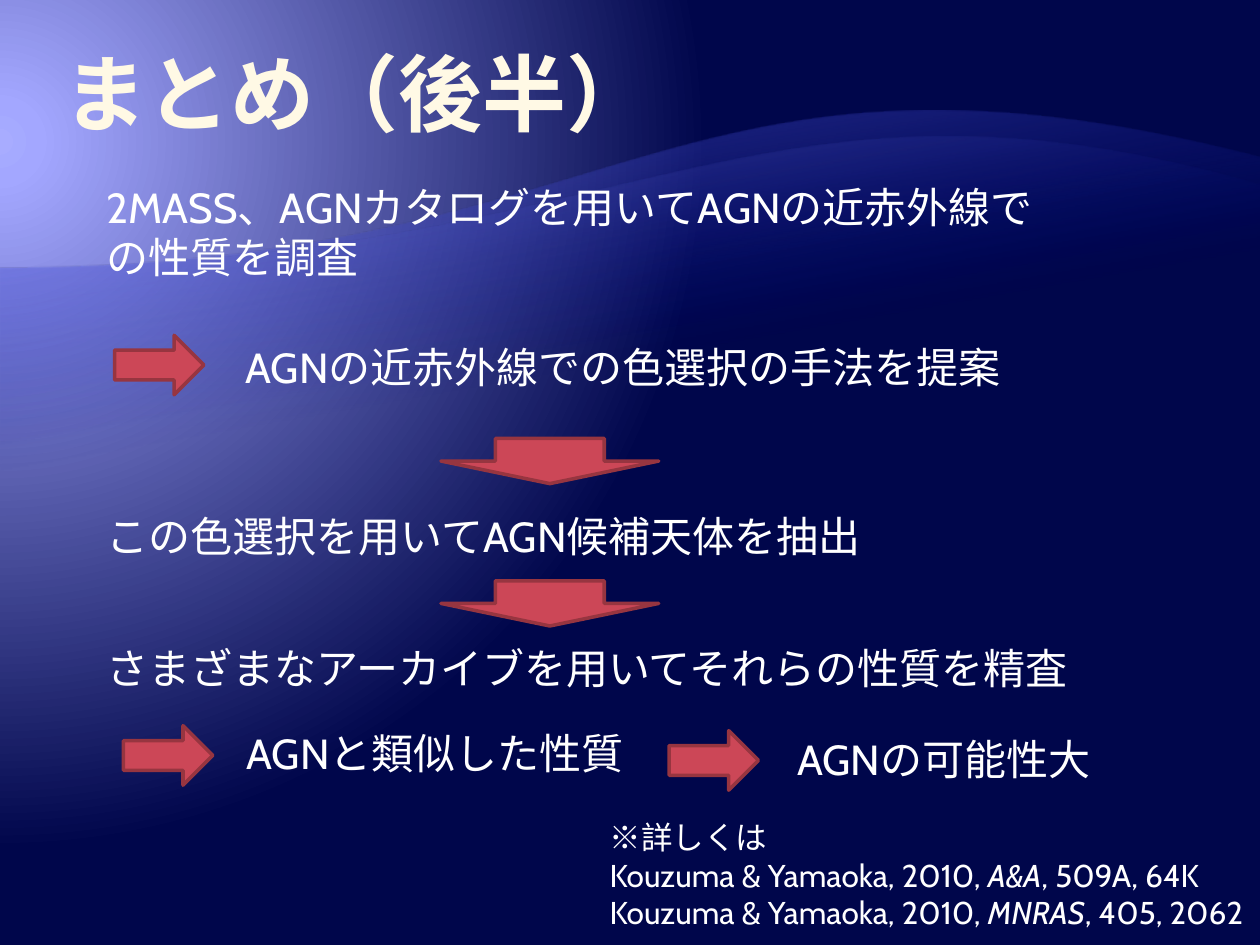
"""Build the summary slide on near-infrared AGN selection."""
import pptx
import pptx.dml.color
import pptx.enum.shapes
import pptx.enum.text
import pptx.oxml
import pptx.oxml.ns
import pptx.util

Cm = pptx.util.Cm
Pt = pptx.util.Pt
RGB = pptx.dml.color.RGBColor.from_string
MSO_SHAPE = pptx.enum.shapes.MSO_SHAPE

COLORS = {
    "title": "FFF9E5", "text": "FFFFFF", "arrow": "CC4757", "arrow_line": "973540",
    "glow": "A8ACFF", "light": "A3A7FF", "navy": "00064B",
    "wave": "797FFF", "deep": "000D9E",
}


def set_gradient(element, stops, direction):
    """Replace the gradient in element; stops are position, colour, alpha in percent."""
    stop_xml = "".join(
        f'<a:gs pos="{position * 1000}"><a:srgbClr val="{COLORS[color]}">'
        f'<a:alpha val="{alpha * 1000}"/></a:srgbClr></a:gs>'
        for position, color, alpha in stops)
    namespace = pptx.oxml.ns.nsdecls("a")
    gradient = pptx.oxml.parse_xml(
        f'<a:gradFill {namespace} rotWithShape="1"><a:gsLst>{stop_xml}</a:gsLst>{direction}</a:gradFill>')
    previous = next(element.iter(pptx.oxml.ns.qn("a:gradFill")))
    previous.getparent().replace(previous, gradient)


def format_run(run, size, color):
    """Set the font, size and colour of a run."""
    run.font.name = "Cabin"
    run.font.size = Pt(size)
    run.font.color.rgb = RGB(COLORS[color])


presentation = pptx.Presentation()
presentation.slide_width = Cm(25.4)
presentation.slide_height = Cm(19.05)
slide = presentation.slides.add_slide(presentation.slide_layouts[5])

slide.background.fill.gradient()
set_gradient(
    slide.element, [(0, "glow", 100), (5, "light", 100), (90, "navy", 100)],
    '<a:path path="circle"><a:fillToRect l="20000" t="30000" r="135000" b="100000"/></a:path>')

waves = [
    (18.62, [(0, 5.41), (12.7, 5.41), (13.56, 0.13), (25.4, 3.18)], "wave", 55),
    (16.18, [(0, 5.41), (12.7, 5.41), (15.19, 0.79), (25.4, 3.73)], "light", 30),
]
STEPS = 60
for bottom, controls, color, alpha in waves:
    crest = []
    for step in range(STEPS + 1):
        t = step / STEPS
        weights = ((1 - t) ** 3, 3 * t * (1 - t) ** 2, 3 * t ** 2 * (1 - t), t ** 3)
        crest.append(tuple(
            Cm(sum(weight * point[axis] for weight, point in zip(weights, controls)))
            for axis in (0, 1)))
    builder = slide.shapes.build_freeform(Cm(0), Cm(bottom))
    builder.add_line_segments(crest + [(Cm(25.4), Cm(bottom))], close=True)
    wave = builder.convert_to_shape()
    wave.shadow.inherit = False
    wave.line.fill.background()
    wave.fill.gradient()
    set_gradient(
        wave.element, [(0, color, alpha), (35, "deep", 0), (100, "deep", 0)],
        '<a:lin ang="4800000" scaled="0"/>')

title = slide.shapes.title
title.element.getparent().append(title.element)
title.left, title.top, title.width, title.height = Cm(1.27), Cm(-0.28), Cm(22.86), Cm(3.18)
frame = title.text_frame
frame.text = "まとめ（後半）"
frame.auto_size = pptx.enum.text.MSO_AUTO_SIZE.NONE
frame.vertical_anchor = pptx.enum.text.MSO_ANCHOR.BOTTOM
frame.margin_left = frame.margin_right = Cm(0)
frame.margin_top = frame.margin_bottom = Cm(0.03)
frame.paragraphs[0].alignment = pptx.enum.text.PP_ALIGN.LEFT
title_run = frame.paragraphs[0].runs[0]
format_run(title_run, 48, "title")
title_run.font.bold = True

statements = [
    (1.9, 3.53, 19.2, 2.31, "2MASS、AGNカタログを用いてAGNの近赤外線での性質を調査"),
    (4.7, 6.76, 19.2, 1.27, "AGNの近赤外線での色選択の手法を提案"),
    (1.9, 10.16, 19.2, 1.27, "この色選択を用いてAGN候補天体を抽出"),
    (1.9, 12.83, 20.78, 1.27, "さまざまなアーカイブを用いてそれらの性質を精査"),
    (4.72, 14.55, 8.89, 1.27, "AGNと類似した性質"),
    (15.82, 14.66, 8.89, 1.27, "AGNの可能性大"),
]
for left, top, width, height, text in statements:
    box = slide.shapes.add_textbox(Cm(left), Cm(top), Cm(width), Cm(height))
    box.text_frame.word_wrap = True
    box.text_frame.text = text
    format_run(box.text_frame.paragraphs[0].runs[0], 24, "text")

RIGHT = (MSO_SHAPE.RIGHT_ARROW, 1.8, 1.2)
DOWN = (MSO_SHAPE.DOWN_ARROW, 4.39, 0.91)
arrows = [
    (RIGHT, 2.49, 14.63), (RIGHT, 2.31, 6.76), (DOWN, 8.89, 8.84),
    (DOWN, 8.89, 11.71), (RIGHT, 13.49, 14.73),
]
for (preset, width, height), left, top in arrows:
    arrow = slide.shapes.add_shape(preset, Cm(left), Cm(top), Cm(width), Cm(height))
    arrow.shadow.inherit = False
    arrow.fill.solid()
    arrow.fill.fore_color.rgb = RGB(COLORS["arrow"])
    arrow.line.color.rgb = RGB(COLORS["arrow_line"])
    arrow.line.width = Pt(2)

references = [
    ["※詳しくは"],
    ["Kouzuma & Yamaoka, 2010, ", "A&A", ", 509A, 64K"],
    ["Kouzuma & Yamaoka, 2010, ", "MNRAS", ", 405, 2062"],
]
box = slide.shapes.add_textbox(Cm(12.04), Cm(16.36), Cm(13.28), Cm(2.57))
frame = box.text_frame
frame.word_wrap = True
for index, parts in enumerate(references):
    paragraph = frame.add_paragraph() if index else frame.paragraphs[0]
    for position, part in enumerate(parts):
        run = paragraph.add_run()
        run.text = part
        format_run(run, 18, "text")
        run.font.italic = position == 1

presentation.save("out.pptx")
